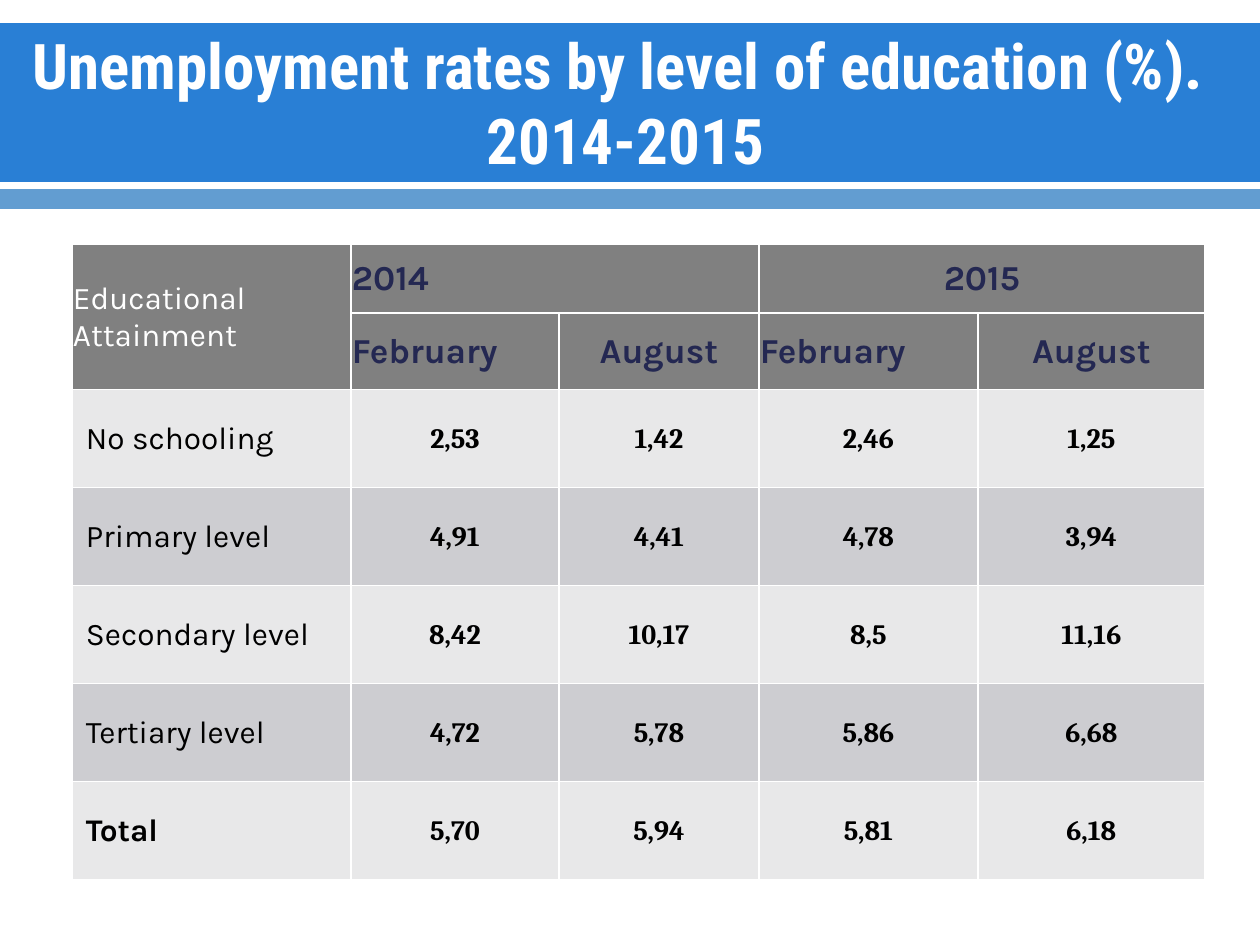
from lxml.etree import SubElement
from pptx import Presentation
from pptx.dml.color import RGBColor
from pptx.enum.shapes import MSO_SHAPE as Shape
from pptx.enum.text import MSO_ANCHOR as Anchor, PP_ALIGN as Align
from pptx.oxml import parse_xml
from pptx.oxml.ns import nsdecls, qn
from pptx.util import Emu, Pt

COLS = [279, 208, 200, 219, 227]
ROWS = [69, 74] + [98] * 5
HEADS = [
    ["Educational Attainment", "2014", "", "2015", ""],
    ["", "February", "August", "February", "August"],
]
RATES = [
    ["No schooling", "2,53", "1,42", "2,46", "1,25"],
    ["Primary level", "4,91", "4,41", "4,78", "3,94"],
    ["Secondary level", "8,42", "10,17", "8,5", "11,16"],
    ["Tertiary level", "4,72", "5,78", "5,86", "6,68"],
    ["Total", "5,70", "5,94", "5,81", "6,18"],
]
MERGES = [((0, 0), (1, 0)), ((0, 1), (0, 2)), ((0, 3), (0, 4))]


def px(n):
    return Emu(round(n * 914400 / 126))


def rgb(code):
    return RGBColor.from_string(code)


def paint(shape, color):
    shape.fill.solid()
    shape.fill.fore_color.rgb = rgb(color)


def write(frame, text, font, size, color, bold=False, align=Align.LEFT):
    para = frame.paragraphs[0]
    para.text = text
    para.alignment = align
    for run in para.runs:
        run.font.name = font
        run.font.size = Pt(size)
        run.font.bold = bold
        run.font.color.rgb = rgb(color)


def add_band(slide, top, height, color):
    band = slide.shapes.add_shape(Shape.RECTANGLE, 0, px(top), px(1260), px(height))
    band.shadow.inherit = False
    paint(band, color)
    band.line.fill.background()


def add_title(slide, text):
    frame = slide.shapes.add_textbox(px(15), px(25), px(1221), px(154)).text_frame
    frame.word_wrap = True
    frame.vertical_anchor = Anchor.MIDDLE
    write(frame, text, "Roboto Condensed", 36, "FFFFFF", True, Align.CENTER)


def edge(cell, color):
    props = cell._tc.get_or_add_tcPr()
    for spot, side in enumerate(["lnL", "lnR", "lnT", "lnB"]):
        line = parse_xml(f'<a:{side} {nsdecls("a")} w="{Pt(1)}"/>')
        fill = SubElement(line, qn("a:solidFill"))
        SubElement(fill, qn("a:srgbClr"), val=color)
        props.insert(spot, line)


def style_cell(cell, color, left=1):
    paint(cell, color)
    edge(cell, "FFFFFF")
    cell.vertical_anchor = Anchor.MIDDLE
    cell.margin_left = px(left)
    cell.margin_right = cell.margin_top = px(1)
    cell.margin_bottom = 0


def fill_head(cell, row, col, text):
    style_cell(cell, "808080")
    if not text:
        return
    if col == 0:
        write(cell.text_frame, text, "Karla", 18, "FFFFFF")
    else:
        mid = text in ("2015", "August")
        align = Align.CENTER if mid else Align.LEFT
        write(cell.text_frame, text, "Karla", 20, "242852", True, align)


def fill_rate(cell, row, col, text):
    color = "CDCDD1" if row % 2 else "E8E8E9"
    style_cell(cell, color, 1 if col else 14)
    if col:
        write(cell.text_frame, text, "Cambria", 16, "000000", True, Align.CENTER)
    else:
        write(cell.text_frame, text, "Karla", 18, "000000", text == "Total")


def add_grid(slide):
    table = slide.shapes.add_table(
        len(ROWS), len(COLS), px(72), px(244), px(sum(COLS)), px(sum(ROWS))
    ).table
    table.first_row = table.horz_banding = False
    for col, width in zip(table.columns, COLS):
        col.width = px(width)
    for row, height in zip(table.rows, ROWS):
        row.height = px(height)
    for start, end in MERGES:
        table.cell(*start).merge(table.cell(*end))
    for row, texts in enumerate(HEADS + RATES):
        fill = fill_head if row < len(HEADS) else fill_rate
        for col, text in enumerate(texts):
            fill(table.cell(row, col), row, col, text)


def main():
    deck = Presentation()
    deck.slide_width, deck.slide_height = px(1260), px(945)
    slide = deck.slides.add_slide(deck.slide_layouts[6])
    add_band(slide, 23, 159, "297FD5")
    add_band(slide, 189, 20, "629DD1")
    add_title(slide, "Unemployment rates by level of education (%). \v2014-2015")
    add_grid(slide)
    deck.save("out.pptx")


if __name__ == "__main__":
    main()
